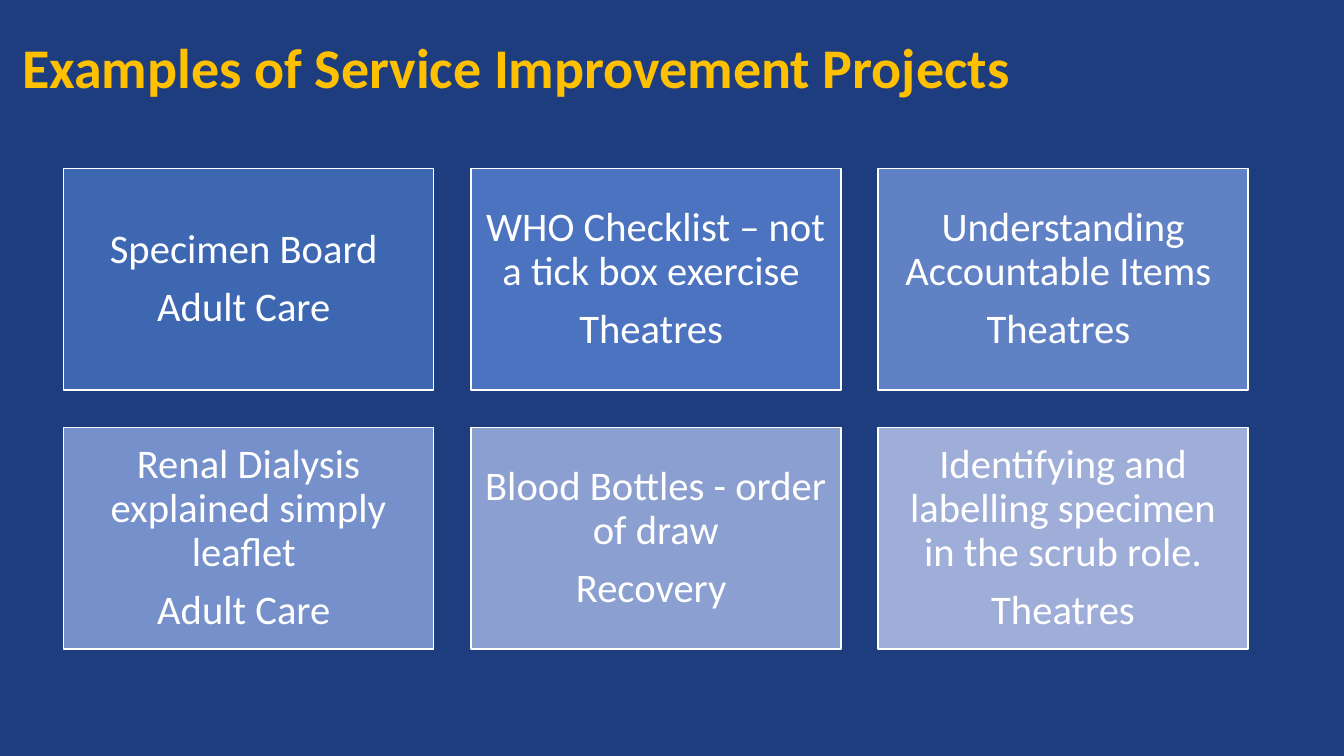
import dataclasses

import pptx
import pptx.dml.color
import pptx.enum.shapes
import pptx.enum.text
import pptx.util

Inches = pptx.util.Inches
Pt = pptx.util.Pt
ALIGN = pptx.enum.text.PP_ALIGN


@dataclasses.dataclass(frozen=True)
class Theme:
    font: str = "Calibri"
    background: str = "1E3D7F"
    title: str = "FFC000"
    light: str = "FFFFFF"
    cards: tuple = ("3E67B2", "4C73BF", "6181C5", "7690CB", "8B9FD1", "9FAED8")
    title_size: int = 40
    card_size: int = 29


THEME = Theme()

PROJECTS = [
    ("Specimen Board ", "Adult Care "),
    ("WHO Checklist – not a tick box exercise ", "Theatres "),
    ("Understanding Accountable Items ", "Theatres "),
    ("Renal Dialysis explained simply leaflet ", "Adult Care "),
    ("Blood Bottles - order of draw", "Recovery "),
    ("Identifying and labelling specimen in the scrub role.", "Theatres"),
]


def color(value):
    return pptx.dml.color.RGBColor.from_string(value)


def add_text(paragraph, text, size, text_color, alignment, bold=False):
    paragraph.alignment = alignment
    paragraph.line_spacing = 0.9
    run = paragraph.add_run()
    run.text = text
    run.font.name = THEME.font
    run.font.size = Pt(size)
    run.font.bold = bold
    run.font.color.rgb = color(text_color)


def place_title(slide, text, left, top, width, height):
    title = slide.shapes.title
    title.left, title.top = Inches(left), Inches(top)
    title.width, title.height = Inches(width), Inches(height)
    frame = title.text_frame
    frame.auto_size = pptx.enum.text.MSO_AUTO_SIZE.NONE
    frame.vertical_anchor = pptx.enum.text.MSO_ANCHOR.MIDDLE
    add_text(frame.paragraphs[0], text, THEME.title_size, THEME.title, ALIGN.LEFT, True)


def add_card(slide, lines, fill, left, top, width, height):
    card = slide.shapes.add_shape(
        pptx.enum.shapes.MSO_SHAPE.RECTANGLE,
        Inches(left), Inches(top), Inches(width), Inches(height),
    )
    card.shadow.inherit = False
    card.fill.solid()
    card.fill.fore_color.rgb = color(fill)
    card.line.color.rgb = color(THEME.light)
    card.line.width = Pt(1)
    frame = card.text_frame
    frame.word_wrap = True
    frame.vertical_anchor = pptx.enum.text.MSO_ANCHOR.MIDDLE
    frame.margin_left = frame.margin_right = Inches(0.12)
    frame.margin_top = frame.margin_bottom = Inches(0.12)
    for index, text in enumerate(lines):
        paragraph = frame.add_paragraph() if index else frame.paragraphs[0]
        add_text(paragraph, text, THEME.card_size, THEME.light, ALIGN.CENTER)
        paragraph.space_after = Pt(10)


def add_project_grid(slide, projects, left, top, width, height, columns=3, gap=0.37):
    rows = -(-len(projects) // columns)
    card_width = (width - gap * (columns - 1)) / columns
    card_height = (height - gap * (rows - 1)) / rows
    for index, (lines, fill) in enumerate(zip(projects, THEME.cards)):
        row, column = divmod(index, columns)
        add_card(
            slide, lines, fill,
            left + column * (card_width + gap),
            top + row * (card_height + gap),
            card_width, card_height,
        )


def main():
    presentation = pptx.Presentation()
    presentation.slide_width = Inches(13.33)
    presentation.slide_height = Inches(7.5)
    slide = presentation.slides.add_slide(presentation.slide_layouts[5])
    slide.background.fill.solid()
    slide.background.fill.fore_color.rgb = color(THEME.background)
    place_title(slide, "Examples of Service Improvement Projects", 0.12, -0.03, 12.06, 1.45)
    add_project_grid(slide, PROJECTS, 0.63, 1.67, 11.75, 4.77)
    presentation.save("out.pptx")


if __name__ == "__main__":
    main()
